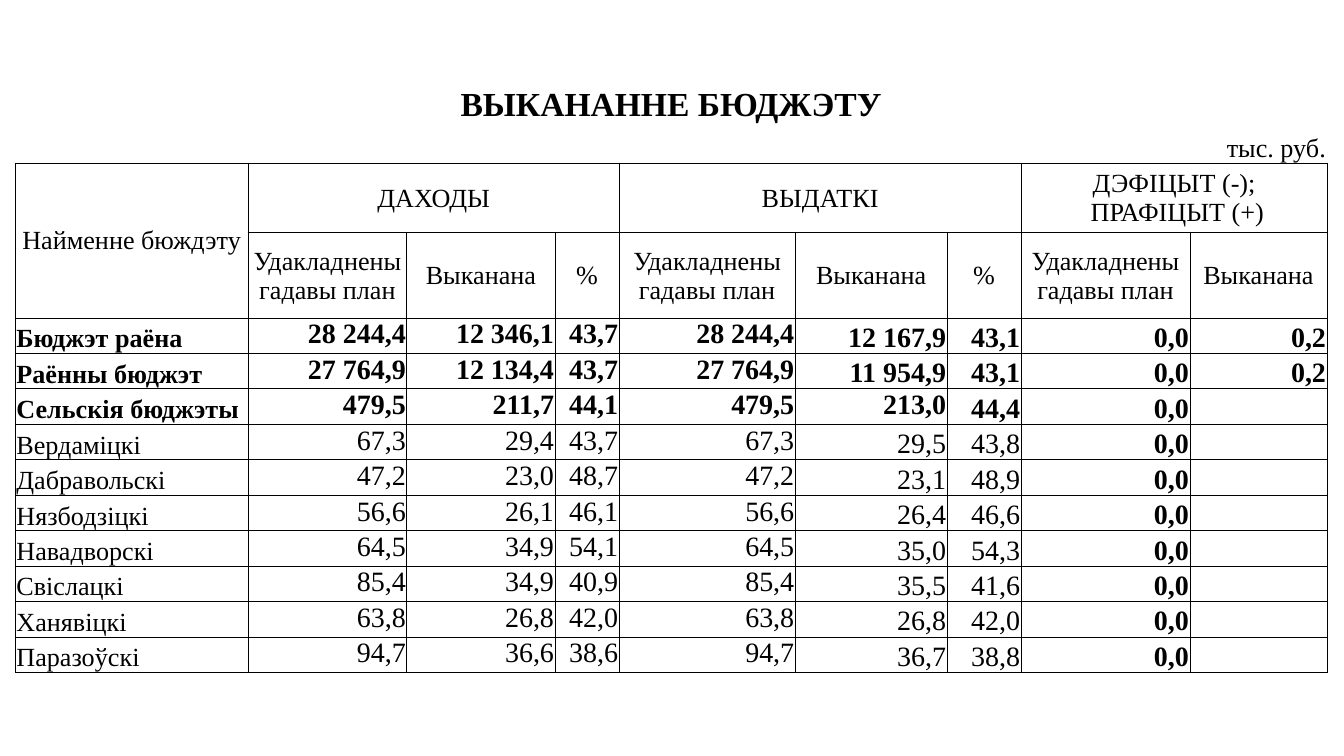
from lxml.etree import SubElement
from pptx import Presentation
from pptx.dml.color import RGBColor
from pptx.enum.text import MSO_ANCHOR, PP_ALIGN
from pptx.oxml.ns import qn
from pptx.util import Cm, Pt

BLACK = RGBColor(0, 0, 0)
FONT = "Times New Roman"

COL_WIDTHS = [4.4, 2.57, 0.43, 1.86, 0.94, 1.21, 3.33, 2.29, 0.58, 1.4, 3.19, 0.3, 2.29]
ROW_HEIGHTS = [0.86, 0.67, 1.32, 1.61] + [0.67] * 10

# First grid column and span of each visible column
DATA_SPANS = [(0, 1), (1, 2), (3, 2), (5, 1), (6, 1), (7, 2), (9, 1), (10, 1), (11, 2)]
UNIT_SPANS = [(2, 2), (4, 2), (8, 2), (10, 2)]
GROUPS = [(1, 5, "ДАХОДЫ"), (6, 4, "ВЫДАТКІ"), (10, 3, "ДЭФІЦЫТ (-);\n ПРАФІЦЫТ (+)")]
PLAN, DONE = "Удакладнены гадавы план", "Выканана"
SUBHEADS = [PLAN, DONE, "%", PLAN, DONE, "%", PLAN, DONE]

FIRST_DATA_ROW = 4
TOTAL_ROWS = 3
DEFICIT_COL = 7
BUDGETS = [
    ("Бюджэт раёна", "28 244,4", "12 346,1", "43,7", "28 244,4", "12 167,9", "43,1", "0,0", "0,2"),
    ("Раённы бюджэт", "27 764,9", "12 134,4", "43,7", "27 764,9", "11 954,9", "43,1", "0,0", "0,2"),
    ("Сельскія бюджэты", "479,5", "211,7", "44,1", "479,5", "213,0", "44,4", "0,0", ""),
    ("Вердаміцкі", "67,3", "29,4", "43,7", "67,3", "29,5", "43,8", "0,0", ""),
    ("Дабравольскі", "47,2", "23,0", "48,7", "47,2", "23,1", "48,9", "0,0", ""),
    ("Нязбодзіцкі", "56,6", "26,1", "46,1", "56,6", "26,4", "46,6", "0,0", ""),
    ("Навадворскі", "64,5", "34,9", "54,1", "64,5", "35,0", "54,3", "0,0", ""),
    ("Свіслацкі", "85,4", "34,9", "40,9", "85,4", "35,5", "41,6", "0,0", ""),
    ("Ханявіцкі", "63,8", "26,8", "42,0", "63,8", "26,8", "42,0", "0,0", ""),
    ("Паразоўскі", "94,7", "36,6", "38,6", "94,7", "36,7", "38,8", "0,0", ""),
]


def add_borders(cell, sides):
    tcPr = cell._tc.get_or_add_tcPr()
    for side in sides:
        ln = SubElement(tcPr, qn(f"a:ln{side}"), w=str(Pt(0.5)))
        fill = SubElement(ln, qn("a:solidFill"))
        SubElement(fill, qn("a:srgbClr"), val=str(BLACK))


def prepare_cell(cell, row):
    """Set insets, borders and fill, and a small size so empty cells keep the row low."""
    cell.margin_left = cell.margin_right = cell.margin_top = Cm(0.02)
    cell.margin_bottom = 0
    if row > 0:
        add_borders(cell, "B" if row == 1 else "LRTB")
    cell.fill.background()
    SubElement(cell.text_frame.paragraphs[0]._p, qn("a:endParaRPr"), sz="1400")


def add_grid(s):
    frame = s.shapes.add_table(len(ROW_HEIGHTS), len(COL_WIDTHS), Cm(0.29), Cm(1.55),
                               Cm(sum(COL_WIDTHS)), Cm(sum(ROW_HEIGHTS)))
    table = frame.table
    table.first_row = table.horz_banding = False
    for column, width in zip(table.columns, COL_WIDTHS):
        column.width = Cm(width)
    for i, (row, height) in enumerate(zip(table.rows, ROW_HEIGHTS)):
        row.height = Cm(height)
        for cell in row.cells:
            prepare_cell(cell, i)
    return table


def merge(table, row, col, cols, rows=1):
    cell = table.cell(row, col)
    if cols * rows > 1:
        cell.merge(table.cell(row + rows - 1, col + cols - 1))
    return cell


def write(cell, text, size=14, bold=False, align=PP_ALIGN.CENTER, anchor=MSO_ANCHOR.MIDDLE):
    cell.vertical_anchor = anchor
    if not text:
        return
    cell.text = text
    for p in cell.text_frame.paragraphs:
        p.alignment = align
        p.font.name = FONT
        p.font.size = Pt(size)
        p.font.bold = bold
        p.font.color.rgb = BLACK


def fill_heading(table):
    write(merge(table, 0, 0, len(COL_WIDTHS)), "ВЫКАНАННЕ БЮДЖЭТУ", 18, True)
    for col, span in UNIT_SPANS:
        merge(table, 1, col, span)
    write(table.cell(1, len(COL_WIDTHS) - 1), "тыс. руб.",
          align=PP_ALIGN.RIGHT, anchor=MSO_ANCHOR.BOTTOM)
    write(merge(table, 2, 0, 1, rows=2), "Найменне бюждэту")
    for col, span, text in GROUPS:
        write(merge(table, 2, col, span), text)
    for (col, span), text in zip(DATA_SPANS[1:], SUBHEADS):
        write(merge(table, 3, col, span), text)


def fill_budgets(table):
    for i, budget in enumerate(BUDGETS):
        for j, ((col, span), text) in enumerate(zip(DATA_SPANS, budget)):
            at_top = 1 <= j <= 4 or (i, j) == (2, 5)
            write(merge(table, FIRST_DATA_ROW + i, col, span), text,
                  size=15 if j else 14,
                  bold=i < TOTAL_ROWS or j >= DEFICIT_COL,
                  align=PP_ALIGN.RIGHT if j else PP_ALIGN.LEFT,
                  anchor=MSO_ANCHOR.TOP if at_top else MSO_ANCHOR.BOTTOM)


def main():
    prs = Presentation()
    prs.slide_width, prs.slide_height = Cm(25.4), Cm(14.29)
    s = prs.slides.add_slide(prs.slide_layouts[6])
    table = add_grid(s)
    fill_heading(table)
    fill_budgets(table)
    prs.save("out.pptx")


if __name__ == "__main__":
    main()
